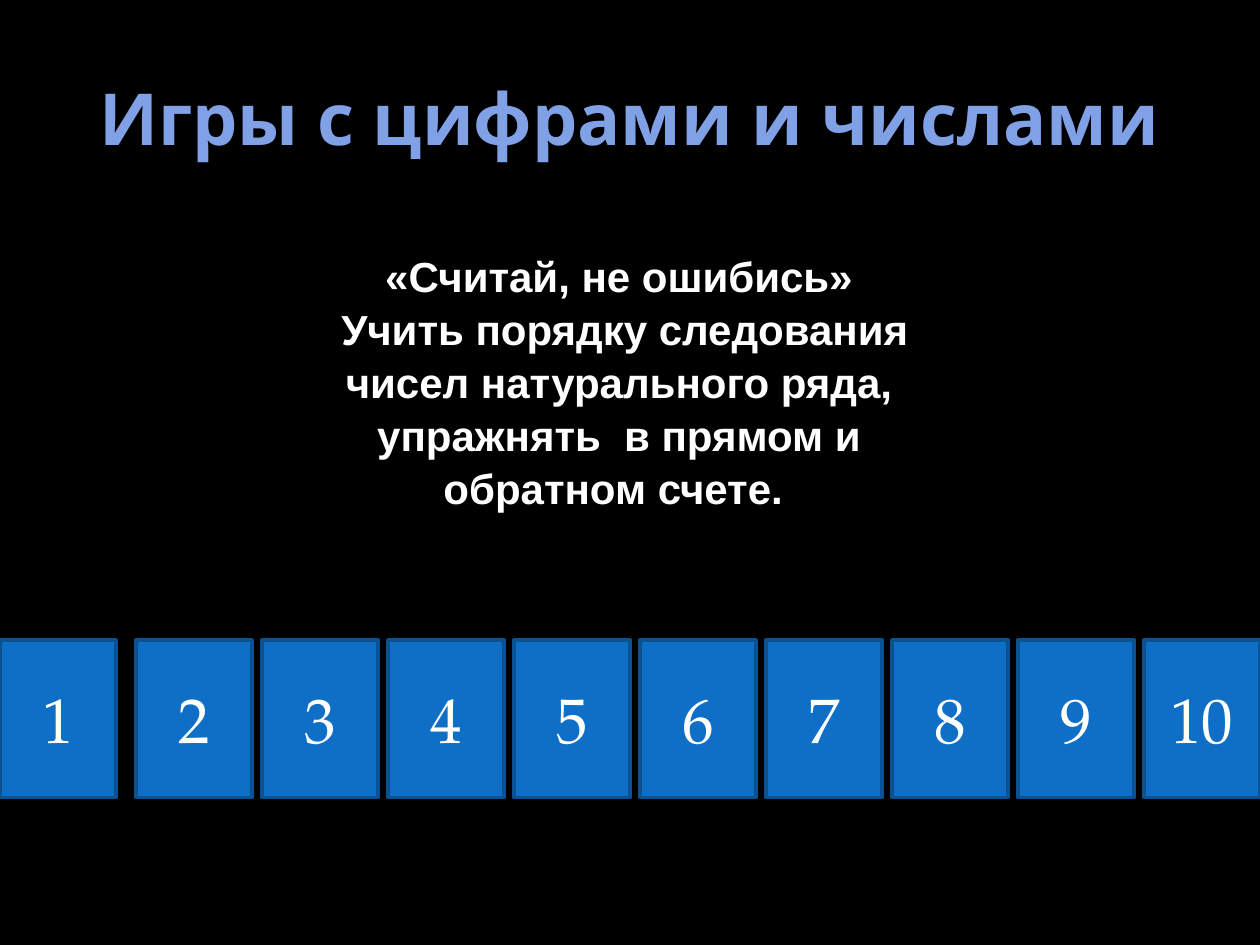
from pptx import Presentation
from pptx.dml.color import RGBColor
from pptx.enum.shapes import MSO_SHAPE as Shape
from pptx.enum.text import MSO_ANCHOR as Anchor, PP_ALIGN as Align
from pptx.util import Cm, Pt

COLORS = {
    "background": "000000",
    "title": "81A1E7",
    "text": "FFFFFF",
    "card": "0F6FC6",
    "card_line": "0B5292",
}
RULES = [
    "«Считай, не ошибись»",
    " Учить порядку следования чисел натурального ряда, "
    "упражнять  в прямом и обратном счете. ",
]
CARD_COUNT = 10
CARD_PITCH = 2.54
SECOND_CARD_LEFT = 2.74


def color(name):
    return RGBColor.from_string(COLORS[name])


def format_para(para, font_name, size, color_name, bold=False):
    para.alignment = Align.CENTER
    para.font.name = font_name
    para.font.size = Pt(size)
    para.font.bold = bold
    para.font.color.rgb = color(color_name)


def set_title(page, text):
    title = page.shapes.title
    title.left, title.top = Cm(1.27), Cm(0.76)
    title.width, title.height = Cm(22.86), Cm(3.18)
    frame = title.text_frame
    frame.text = text
    frame.vertical_anchor = Anchor.MIDDLE
    format_para(frame.paragraphs[0], "Open Sans", 41, "title", bold=True)


def add_rules(page, lines):
    box = page.shapes.add_textbox(Cm(5.28), Cm(4.88), Cm(14.4), Cm(5.38))
    frame = box.text_frame
    frame.word_wrap = True
    frame.text = "\n".join(lines)
    for para in frame.paragraphs:
        format_para(para, "Arial", 24, "text", bold=True)
        para.line_spacing = 1.05


def add_card(page, number, left):
    card = page.shapes.add_shape(
        Shape.RECTANGLE, Cm(left), Cm(12.9), Cm(2.34), Cm(3.18))
    card.shadow.inherit = False
    card.fill.solid()
    card.fill.fore_color.rgb = color("card")
    card.line.color.rgb = color("card_line")
    card.line.width = Pt(2)
    frame = card.text_frame
    frame.text = str(number)
    frame.vertical_anchor = Anchor.MIDDLE
    format_para(frame.paragraphs[0], "TeX Gyre Pagella", 36, "text")


def main():
    deck = Presentation()
    deck.slide_width, deck.slide_height = Cm(25.4), Cm(19.05)
    page = deck.slides.add_slide(deck.slide_layouts[5])
    page.background.fill.solid()
    page.background.fill.fore_color.rgb = color("background")

    # Heading and rules of the game
    set_title(page, "Игры с цифрами и числами")
    add_rules(page, RULES)

    # Number cards: the first touches the slide edge, the rest are evenly spaced
    add_card(page, 1, 0)
    for number in range(2, CARD_COUNT + 1):
        add_card(page, number, SECOND_CARD_LEFT + (number - 2) * CARD_PITCH)

    deck.save("out.pptx")


if __name__ == "__main__":
    main()
